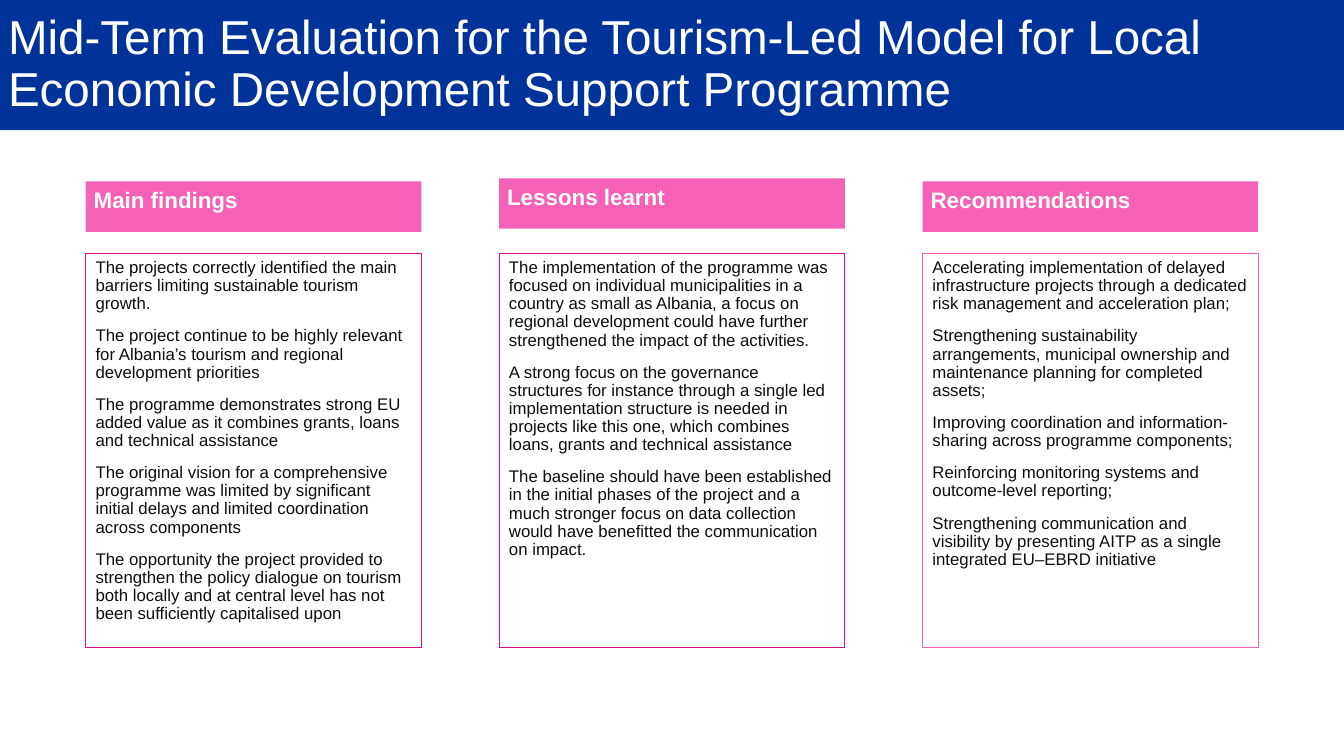
"""Build a slide with the findings, lessons and recommendations of a mid-term evaluation."""
import pptx
import pptx.dml.color
import pptx.enum.shapes
import pptx.enum.text
import pptx.oxml.ns
import pptx.util
import lxml.etree

Inches = pptx.util.Inches
Pt = pptx.util.Pt
RGBColor = pptx.dml.color.RGBColor
MSO_ANCHOR = pptx.enum.text.MSO_ANCHOR

BLUE = RGBColor(0x00, 0x33, 0x99)
PINK = RGBColor(0xF6, 0x61, 0xB8)
MAGENTA = RGBColor(0xDD, 0x0C, 0x86)
WHITE = RGBColor(0xFF, 0xFF, 0xFF)
INK = RGBColor(0x0D, 0x0D, 0x0D)

COLUMNS = [
    ("Main findings", 0.85, 1.8, 3.33, MAGENTA, [
        "The projects correctly identified the main barriers limiting sustainable tourism growth.",
        "The project continue to be highly relevant for Albania’s tourism and regional "
        "development priorities",
        "The programme demonstrates strong EU added value as it combines grants, loans and "
        "technical assistance",
        "The original vision for a comprehensive programme was limited by significant initial "
        "delays and limited coordination across components",
        "The opportunity the project provided to strengthen the policy dialogue on tourism both "
        "locally and at central level has not been sufficiently capitalised upon",
    ]),
    ("Lessons learnt", 4.95, 1.77, 3.43, MAGENTA, [
        "The implementation of the programme was focused on individual municipalities in a "
        "country as small as Albania, a focus on regional development could have further "
        "strengthened the impact of the activities.",
        "A strong focus on the governance structures for instance through a single led "
        "implementation structure is needed in projects like this one, which combines loans, "
        "grants and technical assistance",
        "The baseline should have been established in the initial phases of the project and a "
        "much stronger focus on data collection would have benefitted the communication on impact.",
    ]),
    ("Recommendations", 9.15, 1.8, 3.33, PINK, [
        "Accelerating implementation of delayed infrastructure projects through a dedicated "
        "risk management and acceleration plan;",
        "Strengthening sustainability arrangements, municipal ownership and maintenance "
        "planning for completed assets;",
        "Improving coordination and information-sharing across programme components;",
        "Reinforcing monitoring systems and outcome-level reporting;",
        "Strengthening communication and visibility by presenting AITP as a single integrated "
        "EU–EBRD initiative",
    ]),
]


def add_box(left, top, width, height, fill, inset_x=0.08, inset_y=0.08):
    sp = slide.shapes.add_shape(
        pptx.enum.shapes.MSO_SHAPE.RECTANGLE,
        Inches(left), Inches(top), Inches(width), Inches(height))
    sp.shadow.inherit = False
    sp.fill.solid()
    sp.fill.fore_color.rgb = fill
    sp.line.fill.background()
    tf = sp.text_frame
    tf.word_wrap = True
    tf.vertical_anchor = MSO_ANCHOR.TOP
    tf.margin_left = tf.margin_right = Inches(inset_x)
    tf.margin_top = tf.margin_bottom = Inches(inset_y)
    return sp


def write(sp, texts, size, color, bold=False):
    tf = sp.text_frame
    for i, text in enumerate(texts):
        p = tf.add_paragraph() if i else tf.paragraphs[0]
        p.text = text
        p.alignment = pptx.enum.text.PP_ALIGN.LEFT
        p.line_spacing = 0.9
        p.space_before = Pt(10 if i else 0)
        r = p.runs[0]
        r.font.name = "Arial"
        r.font.size = Pt(size)
        r.font.bold = bold
        r.font.color.rgb = color


prs = pptx.Presentation()
prs.slide_width = Inches(13.33)
prs.slide_height = Inches(7.5)
slide = prs.slides.add_slide(prs.slide_layouts[6])

title = add_box(0, 0, 13.33, 1.29, BLUE)
title.text_frame.vertical_anchor = MSO_ANCHOR.MIDDLE
write(title, ["Mid-Term Evaluation for the Tourism-Led Model for Local "
              "Economic Development Support Programme"], 34, WHITE)

for heading, left, heading_top, width, border, points in COLUMNS:
    header = add_box(left, heading_top, width, 0.5, PINK)
    write(header, [heading], 16, WHITE, bold=True)

    body = add_box(left, 2.52, width, 3.9, WHITE, 0.1, 0.05)
    body.line.color.rgb = border
    body.line.width = Pt(0.75)
    fill_color = body.fill._xPr.find(".//" + pptx.oxml.ns.qn("a:srgbClr"))
    lxml.etree.SubElement(fill_color, pptx.oxml.ns.qn("a:alpha"), val="50000")
    write(body, points, 12, INK)

prs.save("out.pptx")
